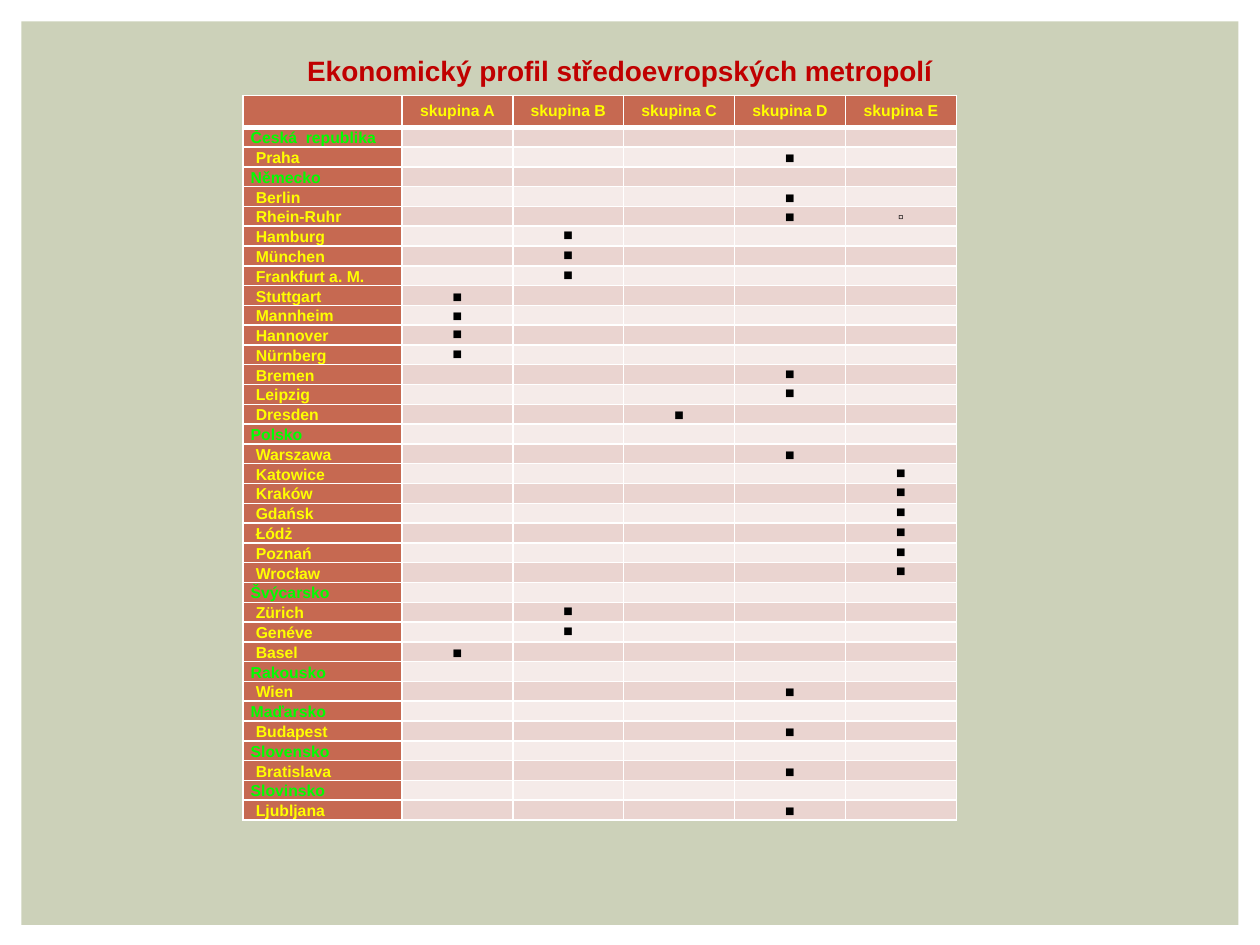
import pptx
import pptx.util
import pptx.dml.color
import pptx.enum.shapes
import pptx.enum.text
from lxml import etree

Inches, Pt = pptx.util.Inches, pptx.util.Pt
ALIGN, ANCHOR = pptx.enum.text.PP_ALIGN, pptx.enum.text.MSO_ANCHOR
GROUPS = "ABCDE"
TERRACOTTA, BANDS = "C66951", ("F5EBE9", "EAD4D0")
YELLOW, GREEN = "FFFF00", "00FF00"

# Each country with its cities and the groups they belong to
COUNTRIES = {
    "Česká  republika": {"Praha": "D"},
    "Německo": {
        "Berlin": "D", "Rhein-Ruhr": "DE", "Hamburg": "B", "München": "B",
        "Frankfurt a. M.": "B", "Stuttgart": "A", "Mannheim": "A",
        "Hannover": "A", "Nürnberg": "A", "Bremen": "D", "Leipzig": "D",
        "Dresden": "C",
    },
    "Polsko": {
        "Warszawa": "D", "Katowice": "E", "Kraków": "E", "Gdańsk": "E",
        "Łódż": "E", "Poznań": "E", "Wrocław": "E",
    },
    "Švýcarsko": {"Zürich": "B", "Genéve": "B", "Basel": "A"},
    "Rakousko": {"Wien": "D"},
    "Maďarsko": {"Budapest": "D"},
    "Slovensko": {"Bratislava": "D"},
    "Slovinsko": {"Ljubljana": "D"},
}
TOP_MARKED = {
    "Hamburg", "München", "Frankfurt a. M.", "Hannover", "Nürnberg", "Bremen",
    "Leipzig", "Katowice", "Kraków", "Gdańsk", "Łódż", "Poznań", "Wrocław",
    "Zürich", "Genéve",
}


def rgb(color):
    return pptx.dml.color.RGBColor.from_string(color)


def fill_cell(cell, text, fill, color, bold, align, anchor, indent, top, bottom):
    """Write one table cell; top and bottom are border widths in points."""
    cell.margin_left, cell.margin_right = Inches(indent), Inches(0.03)
    cell.margin_top = cell.margin_bottom = 0
    cell.vertical_anchor = anchor
    tcPr = cell._tc.get_or_add_tcPr()
    ns = pptx.oxml.ns.qn
    for side, width in (("L", 1), ("R", 1), ("T", top), ("B", bottom)):
        ln = etree.SubElement(tcPr, ns("a:ln" + side), w=str(Pt(width)))
        solid = etree.SubElement(ln, ns("a:solidFill"))
        etree.SubElement(solid, ns("a:srgbClr"), val="FFFFFF")
    cell.fill.solid()
    cell.fill.fore_color.rgb = rgb(fill)
    p = cell.text_frame.paragraphs[0]
    p.alignment = align
    if text:
        r = p.add_run()
        r.text = text
        r.font.name, r.font.size, r.font.bold = "Arial", Pt(9), bold
        r.font.color.rgb = rgb(color)
    else:
        # Keeps an empty cell from stretching its row
        etree.SubElement(p._p, ns("a:endParaRPr"), sz="900")


prs = pptx.Presentation()
prs.slide_width, prs.slide_height = Inches(10), Inches(7.5)
s = prs.slides.add_slide(prs.slide_layouts[6])

panel = s.shapes.add_shape(pptx.enum.shapes.MSO_SHAPE.RECTANGLE,
                           Inches(0.17), Inches(0.17), Inches(9.66), Inches(7.17))
panel.shadow.inherit = False
panel.fill.solid()
panel.fill.fore_color.rgb = rgb("CCD1B9")
panel.line.fill.background()

rows = []
for country, cities in COUNTRIES.items():
    rows.append((country, "", GREEN, 0.06))
    rows += [(city, groups, YELLOW, 0.1) for city, groups in cities.items()]

header_height, table_height = 0.25, 5.76
table = s.shapes.add_table(len(rows) + 1, len(GROUPS) + 1, Inches(1.93), Inches(0.76),
                           Inches(5.67), Inches(table_height)).table
table.first_row = table.horz_banding = False
for i, column in enumerate(table.columns):
    column.width = Inches(0.88 if i else 1.26)
for i, row in enumerate(table.rows):
    row.height = Inches((table_height - header_height) / len(rows) if i else header_height)

for col, text in enumerate([""] + ["skupina " + g for g in GROUPS]):
    fill_cell(table.cell(0, col), text, TERRACOTTA, YELLOW, True,
              ALIGN.CENTER, ANCHOR.MIDDLE, 0.03, 1, 3)

for i, (name, groups, color, indent) in enumerate(rows, 1):
    top = 3 if i == 1 else 1
    fill_cell(table.cell(i, 0), name, TERRACOTTA, color, True,
              ALIGN.JUSTIFY, ANCHOR.BOTTOM, indent, top, 1)
    anchor = ANCHOR.TOP if name in TOP_MARKED else ANCHOR.BOTTOM
    for col, group in enumerate(GROUPS, 1):
        # The first group is the main one, any further group is secondary
        mark = "" if group not in groups else "■" if groups[0] == group else "▫"
        fill_cell(table.cell(i, col), mark, BANDS[i % 2], "000000", False,
                  ALIGN.CENTER, anchor, 0.03, top, 1)

title = s.shapes.add_textbox(Inches(0.12), Inches(0.19), Inches(9.6), Inches(0.74))
tf = title.text_frame
tf.word_wrap = True
tf.vertical_anchor = ANCHOR.MIDDLE
p = tf.paragraphs[0]
p.alignment = ALIGN.CENTER
r = p.add_run()
r.text = "Ekonomický profil středoevropských metropolí"
r.font.name, r.font.size, r.font.bold = "Arial", Pt(16), True
r.font.color.rgb = rgb("C00000")

prs.save("out.pptx")
